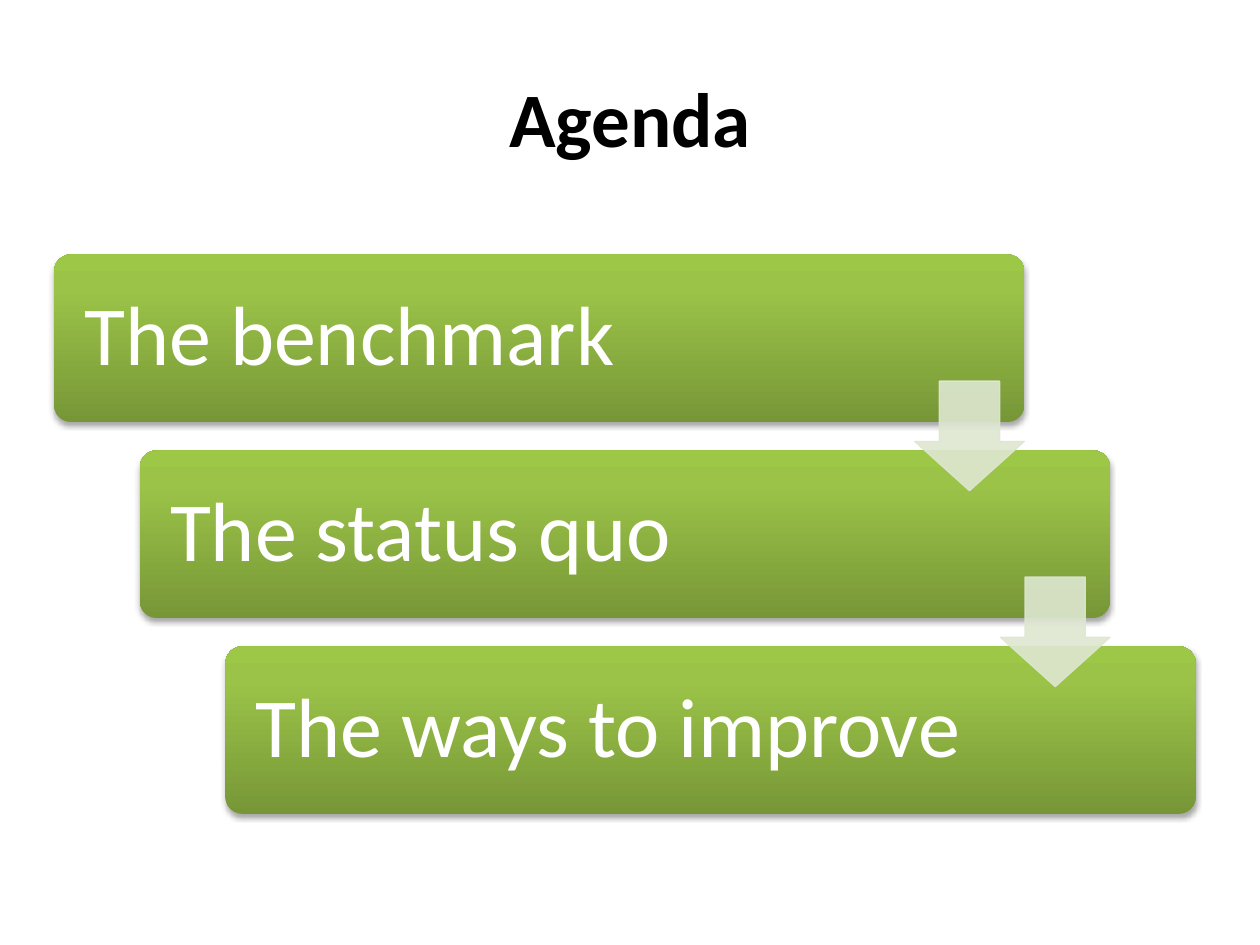
from lxml.etree import SubElement as Sub
from pptx import Presentation
from pptx.dml.color import RGBColor as RGB
from pptx.enum.shapes import MSO_SHAPE as Shape
from pptx.enum.text import MSO_ANCHOR as Anchor, PP_ALIGN as Align
from pptx.oxml.ns import qn
from pptx.util import Inches as In, Pt

TITLE = "Agenda"
STEPS = ["The benchmark", "The status quo", "The ways to improve"]
HEX = {"ink": "000000", "text": "FFFFFF", "arrow": "DEE7D1",
       "low": "779737", "mid": "9BC348", "top": "9DC746"}
STOPS = [(0, "low"), (80, "mid"), (100, "top")]

LEFT, TOP = 0.43, 2.02
WIDE, HIGH = 7.7, 1.33
STEP_X, STEP_Y = 0.68, 1.555
PAD, INSET = 0.04, 0.2
ARROW, DROP = 0.87, 1.005


def color(name):
    return RGB.from_string(HEX[name])


def tint(node, name, alpha=None):
    clr = Sub(node, qn("a:srgbClr"), val=HEX[name])
    if alpha:
        Sub(clr, qn("a:alpha"), val=str(alpha * 1000))


def write(frame, text, size, name, align, bold=False):
    frame.word_wrap = True
    frame.vertical_anchor = Anchor.MIDDLE
    para = frame.paragraphs[0]
    para.alignment = align
    run = para.add_run()
    run.text = text
    font = run.font
    font.name, font.size, font.bold = "Calibri", Pt(size), bold
    font.color.rgb = color(name)
    return para


def draw(slide, kind, x, y, w, h, *adjust):
    shape = slide.shapes.add_shape(kind, In(x), In(y), In(w), In(h))
    shape.shadow.inherit = False
    for i, value in enumerate(adjust):
        shape.adjustments[i] = value
    return shape


def add_bar(slide, x, y, text):
    bar = draw(slide, Shape.ROUNDED_RECTANGLE, x, y, WIDE, HIGH, 0.1)
    bar.fill.gradient()
    bar.fill.gradient_angle = 90
    bar.line.fill.background()
    props = bar.element.spPr
    stops = props.find(qn("a:gradFill")).find(qn("a:gsLst"))
    for old in list(stops):
        stops.remove(old)
    for pos, name in STOPS:
        tint(Sub(stops, qn("a:gs"), pos=str(pos * 1000)), name)
    shade = Sub(props.find(qn("a:effectLst")), qn("a:outerShdw"),
                blurRad=str(Pt(3.1)), dist=str(Pt(1.8)),
                dir="5400000", rotWithShape="0")
    tint(shade, "ink", 35)

    room = 6.26 if text == STEPS[0] else 6.07
    box = slide.shapes.add_textbox(In(x + PAD), In(y + PAD),
                                   In(room), In(HIGH - 2 * PAD))
    frame = box.text_frame
    frame.margin_left = frame.margin_right = In(INSET)
    frame.margin_top = frame.margin_bottom = In(INSET)
    para = write(frame, text, 48, "text", Align.LEFT)
    para.line_spacing = 0.9


def add_arrow(slide, x, y):
    arrow = draw(slide, Shape.DOWN_ARROW, x, y, ARROW, ARROW, 0.55, 0.45)
    arrow.fill.solid()
    arrow.line.fill.solid()
    arrow.line.width = Pt(0.75)
    props = arrow.element.spPr
    for node in (props, props.find(qn("a:ln"))):
        fill = node.find(qn("a:solidFill"))
        for old in list(fill):
            fill.remove(old)
        tint(fill, "arrow", 90)


def main():
    deck = Presentation()
    deck.slide_width, deck.slide_height = In(10), In(7.5)
    slide = deck.slides.add_slide(deck.slide_layouts[5])
    title = slide.shapes.title
    title.left, title.top = In(0.5), In(0.3)
    title.width, title.height = In(9), In(1.25)
    write(title.text_frame, TITLE, 44, "ink", Align.CENTER, True)

    spots = [(LEFT + i * STEP_X, TOP + i * STEP_Y) for i in range(len(STEPS))]
    for (x, y), text in zip(spots, STEPS):
        add_bar(slide, x, y, text)
    for x, y in spots[:-1]:
        add_arrow(slide, x + WIDE - ARROW, y + DROP)
    deck.save("out.pptx")


if __name__ == "__main__":
    main()
